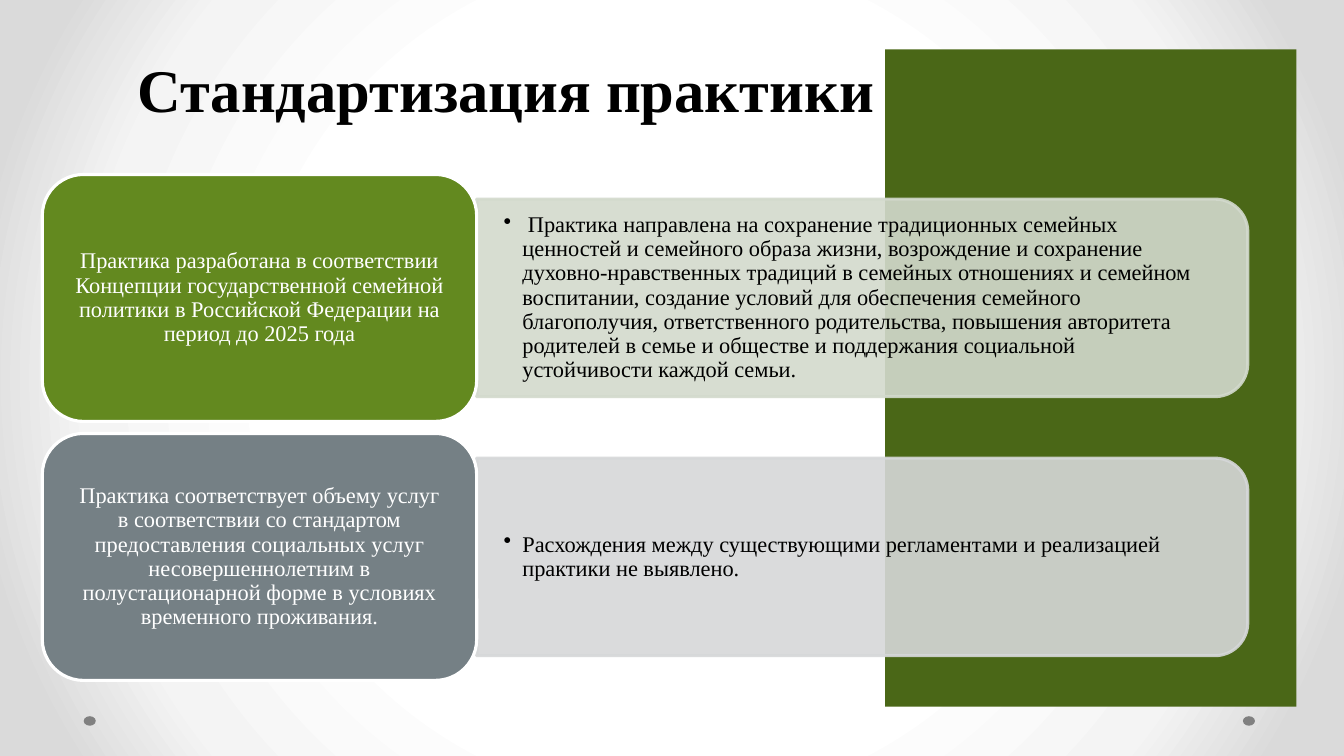
from pptx import Presentation, oxml
from pptx.dml.color import RGBColor
from pptx.enum import shapes, text
from pptx.oxml import ns
from pptx.util import Pt

# Content
TITLE = "Стандартизация практики"
BLACK, WHITE = RGBColor(0, 0, 0), RGBColor(255, 255, 255)
GREEN, GREY = RGBColor(0x63, 0x89, 0x1F), RGBColor(0x75, 0x80, 0x85)
PALE, MIST = RGBColor(0xD3, 0xDA, 0xCD), RGBColor(0xD6, 0xD8, 0xD9)
DARK, DOT = RGBColor(0x4A, 0x67, 0x17), RGBColor(0x80, 0x80, 0x80)
ROWS = [
    ("Практика разработана в соответствии Концепции государственной семейной "
     "политики в Российской Федерации на период до 2025 года", GREEN,
     " Практика направлена на сохранение традиционных семейных ценностей и "
     "семейного образа жизни, возрождение и сохранение духовно-нравственных "
     "традиций в семейных отношениях и семейном воспитании, создание условий "
     "для обеспечения семейного благополучия, ответственного родительства, "
     "повышения авторитета родителей в семье и обществе и поддержания "
     "социальной устойчивости каждой семьи.", PALE),
    ("Практика соответствует объему услуг в соответствии со стандартом "
     "предоставления социальных услуг несовершеннолетним в полустационарной "
     "форме в условиях временного проживания.", GREY,
     "Расхождения между существующими регламентами и реализацией практики "
     "не выявлено.", MIST),
]
STOPS = [(50, "FFFFFF"), (76, "F4F4F4"), (92, "DADADA")]

# Layout in points
LEFT, TOP, STEP = 30.2, 124.6, 185
CARD_W, CARD_H = 310.3, 176.4
PANEL_W, PANEL_H = 550.8, 141.1
BODY_W, BODY_H = 544.3, 127.4

FORM = dict(name="Times New Roman", size=Pt(16), bold=False)
SHAPE = shapes.MSO_SHAPE

deck = Presentation()
deck.slide_width, deck.slide_height = Pt(960), Pt(540)
slide = deck.slides.add_slide(deck.slide_layouts[5])


def style(item, **values):
    for key, value in values.items():
        setattr(item, key, value)


def draw(kind, box, fill, line=None):
    part = slide.shapes.add_shape(kind, *map(Pt, box))
    part.shadow.inherit = False
    part.fill.solid()
    part.fill.fore_color.rgb = fill
    if line is None:
        part.line.fill.background()
    else:
        part.line.color.rgb = line
        part.line.width = Pt(2.25)
    return part


def write(part, words, color, align, pad, space=0.9, **form):
    frame = part.text_frame
    style(frame, word_wrap=True, auto_size=text.MSO_AUTO_SIZE.NONE,
          vertical_anchor=text.MSO_ANCHOR.MIDDLE,
          margin_left=Pt(pad[0]), margin_right=Pt(pad[0]),
          margin_top=Pt(pad[1]), margin_bottom=Pt(pad[1]))
    para = frame.paragraphs[0]
    para.text = words
    style(para, alignment=align, line_spacing=space)
    style(para.runs[0].font, **{**FORM, **form})
    para.runs[0].font.color.rgb = color
    return para


# Background: white centre fading to grey
fill = slide.background.fill
fill.gradient()
grad = slide.background._cSld.find(".//" + ns.qn("a:gradFill"))
stops = "".join(f'<a:gs pos="{pos}000"><a:srgbClr val="{tint}"/></a:gs>'
                for pos, tint in STOPS)
grad.getparent().replace(grad, oxml.parse_xml(
    f'<a:gradFill {ns.nsdecls("a")} rotWithShape="1"><a:gsLst>{stops}</a:gsLst>'
    '<a:path path="circle"><a:fillToRect l="50000" t="50000" r="50000" '
    'b="50000"/></a:path></a:gradFill>'))

# Side block and corner dots
draw(SHAPE.RECTANGLE, (632.2, 35.3, 293.8, 469.4), DARK)
for left in (59.8, 887.8):
    draw(SHAPE.OVAL, (left, 511.6, 8.6, 6.8), DOT)

# Title
title = slide.shapes.title
style(title, left=Pt(72.7), top=Pt(25.2), width=Pt(577.4), height=Pt(67.7))
write(title, TITLE, BLACK, text.PP_ALIGN.CENTER, (7.2, 3.6), Pt(58),
      size=Pt(43.2), bold=True)
title.text_frame.vertical_anchor = text.MSO_ANCHOR.BOTTOM
# Keep the title above the side block
slide.shapes._spTree.append(title._element)

# Rows: panel, its bullet, then the card
for row, (label, tone, note, tint) in enumerate(ROWS):
    top = TOP + row * STEP
    mid, edge = top + CARD_H / 2, LEFT + CARD_W
    panel = draw(SHAPE.ROUND_2_SAME_RECTANGLE,
                 (edge + (PANEL_W - PANEL_H) / 2, mid - PANEL_W / 2,
                  PANEL_H, PANEL_W), tint, tint)
    panel.rotation = 90
    for color in panel._element.spPr.iter(ns.qn("a:srgbClr")):
        color.append(oxml.parse_xml(
            f'<a:alpha {ns.nsdecls("a")} val="90000"/>'))

    body = slide.shapes.add_textbox(
        *map(Pt, (edge, mid - BODY_H / 2, BODY_W, BODY_H)))
    para = write(body, note, BLACK, text.PP_ALIGN.LEFT, (19.2, 9.9))
    props = para._p.get_or_add_pPr()
    style_in = dict(marL=Pt(13.5), indent=-Pt(13.5))
    for key, value in style_in.items():
        props.set(key, str(int(value)))
    props.append(oxml.parse_xml(f'<a:buChar {ns.nsdecls("a")} char="•"/>'))

    card = draw(SHAPE.ROUNDED_RECTANGLE, (LEFT, top, CARD_W, CARD_H),
                tone, WHITE)
    write(card, label, WHITE, text.PP_ALIGN.CENTER, (13.6, 10.8))

deck.save("out.pptx")
